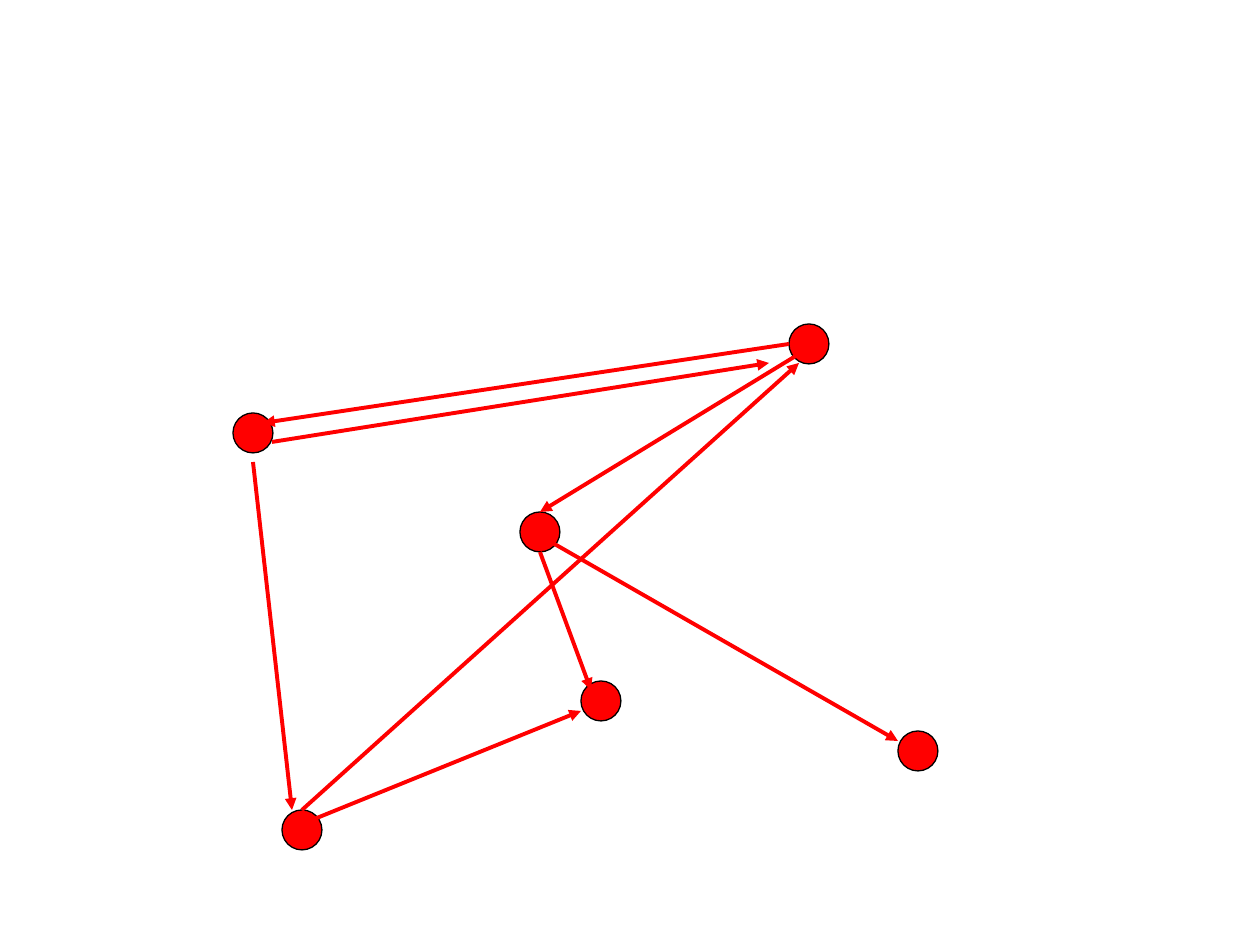
"""Build a slide with a directed graph of six nodes and eight arrows."""
from lxml.etree import SubElement
from pptx import Presentation
from pptx.dml.color import RGBColor
from pptx.enum.shapes import MSO_CONNECTOR, MSO_SHAPE
from pptx.oxml.ns import qn
from pptx.util import Inches, Pt

PX = Inches(1) // 126
RED = RGBColor(0xFF, 0x00, 0x00)
BLACK = RGBColor(0x00, 0x00, 0x00)
DIAMETER = 40

NODE_CENTERS = [(253, 433), (601, 701), (302, 830), (918, 751), (540, 532), (809, 344)]
ARROWS = [
    ((312, 820), (581, 711)),
    ((302, 810), (799, 363)),
    ((540, 552), (591, 690)),
    ((551, 542), (898, 741)),
    ((789, 344), (263, 423)),
    ((253, 462), (292, 810)),
    ((272, 442), (769, 363)),
    ((799, 354), (540, 512)),
]


def add_node(slide, center):
    left, top = (coordinate - DIAMETER // 2 for coordinate in center)
    node = slide.shapes.add_shape(
        MSO_SHAPE.OVAL, left * PX, top * PX, DIAMETER * PX, DIAMETER * PX
    )
    node.shadow.inherit = False
    node.fill.solid()
    node.fill.fore_color.rgb = RED
    node.line.color.rgb = BLACK
    node.line.width = Pt(0.75)


def add_arrow(slide, start, end):
    ends = [coordinate * PX for coordinate in start + end]
    arrow = slide.shapes.add_connector(MSO_CONNECTOR.STRAIGHT, *ends)
    arrow.line.color.rgb = RED
    arrow.line.width = Pt(2.25)
    SubElement(arrow.line._get_or_add_ln(), qn("a:tailEnd"), type="triangle")
    SubElement(arrow._element.spPr, qn("a:effectLst"))


def main():
    deck = Presentation()
    deck.slide_width, deck.slide_height = 1260 * PX, 945 * PX
    slide = deck.slides.add_slide(deck.slide_layouts[6])
    for center in NODE_CENTERS:
        add_node(slide, center)
    for start, end in ARROWS:
        add_arrow(slide, start, end)
    deck.save("out.pptx")


if __name__ == "__main__":
    main()
